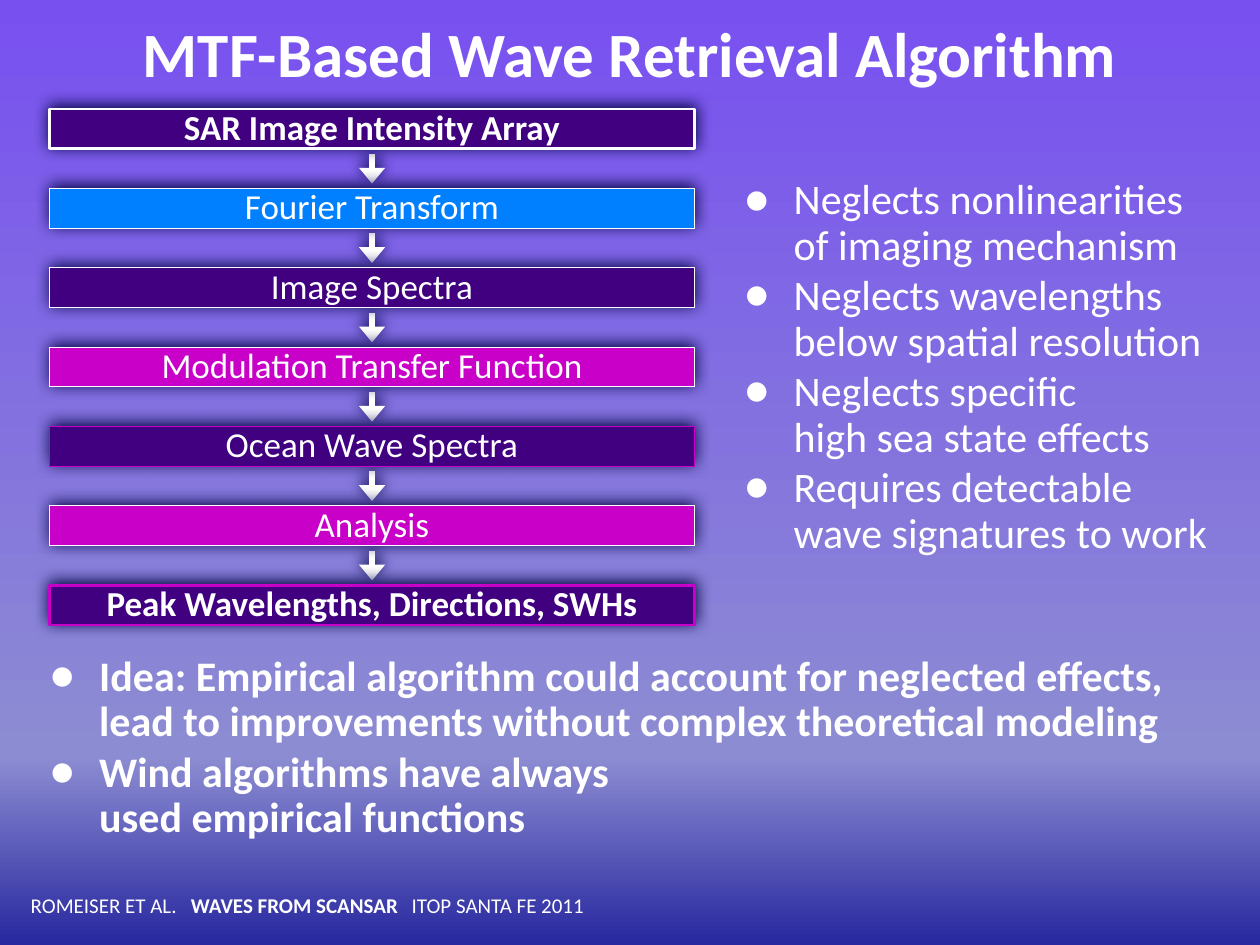
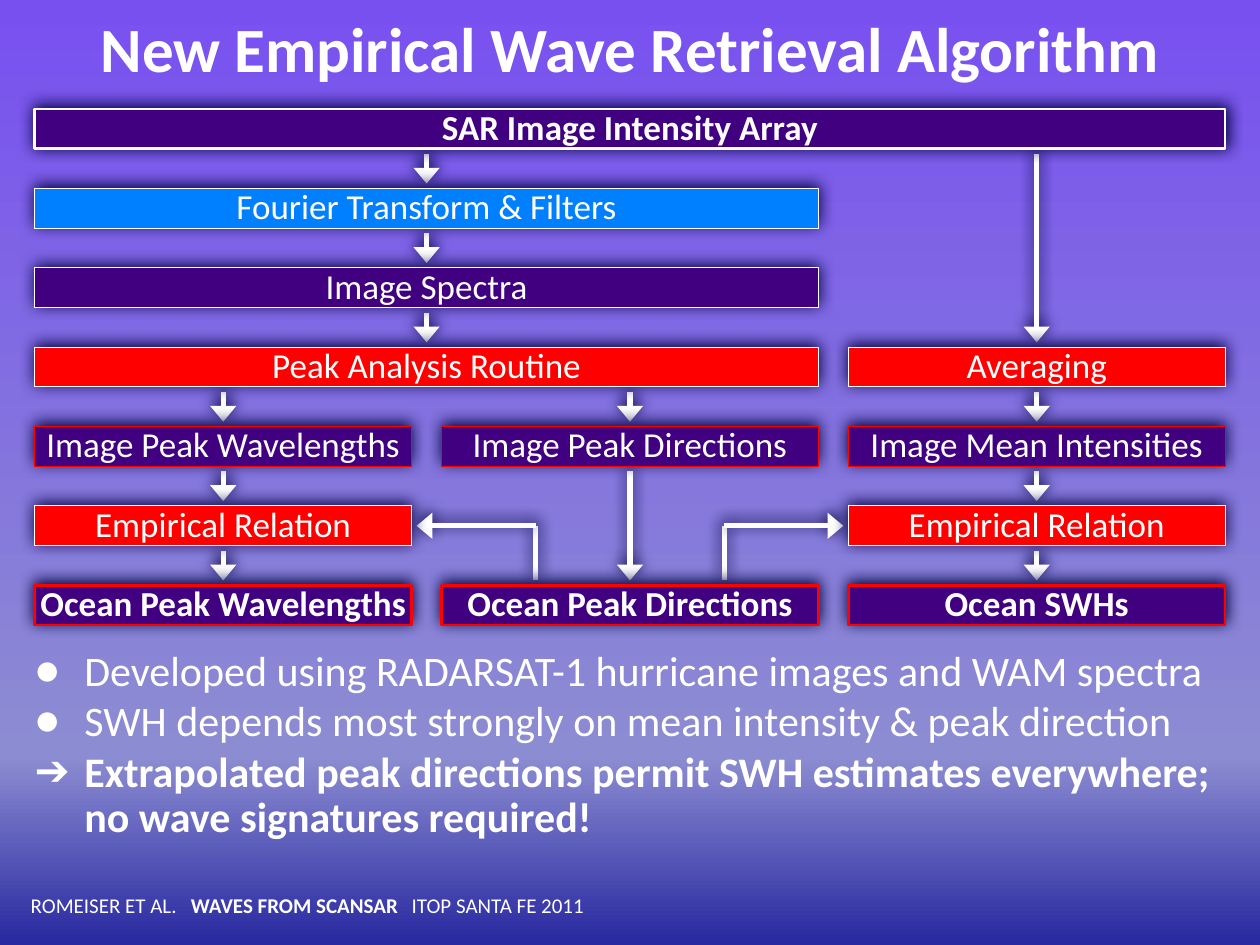
from lxml.etree import SubElement
from pptx import Presentation
from pptx.dml.color import RGBColor
from pptx.enum.shapes import MSO_CONNECTOR, MSO_SHAPE
from pptx.enum.text import MSO_ANCHOR, MSO_AUTO_SIZE, PP_ALIGN
from pptx.oxml.ns import qn
from pptx.util import Cm, Pt

HUES = {
    "white": "FFFFFF", "navy": "000040", "plum": "400080", "blue": "0080FF",
    "pink": "C800C8", "red": "FF0000",
    "top": "7850F0", "haze": "8C8CD2", "deep": "2828A0",
}
FONT = "Calibri"
HIGH, STEP, GAP = 0.8, 1.6, 0.1
WIDE, PITCH = 7.6, 8.2


def hue(name):
    """Return a named colour."""
    return RGBColor.from_string(HUES[name])


def tag(parent, name, **attrs):
    """Append a drawing element and return it."""
    return SubElement(parent, qn(name), attrs)


def write(frame, text, size=24, bold=False, align=PP_ALIGN.LEFT, space=1.0,
          after=0, mark=None, tabs=(), first=True):
    """Write one paragraph; stars switch bold and newlines break the line."""
    para = frame.paragraphs[0] if first else frame.add_paragraph()
    para.alignment, para.line_spacing = align, space
    para.space_before, para.space_after = Pt(0), Pt(after)
    props = para._p.get_or_add_pPr()
    if mark:
        props.set("marL", str(Cm(1)))
        props.set("indent", str(-Cm(1)))
        tag(tag(props, "a:buClr"), "a:srgbClr", val=HUES["white"])
        tag(props, "a:buFont", typeface=FONT)
        tag(props, "a:buChar", char=mark)
    if tabs:
        stops = tag(props, "a:tabLst")
        for stop in tabs:
            tag(stops, "a:tab", pos=str(Cm(stop)), algn="l")
    for row, line in enumerate(text.split("\n")):
        if row:
            para.add_line_break()
        for turn, part in enumerate(line.split("*")):
            if part:
                run = para.add_run()
                run.text = part
                font = run.font
                font.name, font.size = FONT, Pt(size)
                font.bold = bold != (turn % 2 == 1)
                font.color.rgb = hue("white")


def clear(frame, anchor=MSO_ANCHOR.TOP):
    """Strip the insets of a text frame and set its anchor."""
    frame.margin_left = frame.margin_right = 0
    frame.margin_top = frame.margin_bottom = 0
    frame.word_wrap, frame.auto_size = True, MSO_AUTO_SIZE.NONE
    frame.vertical_anchor = anchor
    return frame


def place(shape, left, top, width, height):
    """Move and size a shape in centimetres."""
    shape.left, shape.top = Cm(left), Cm(top)
    shape.width, shape.height = Cm(width), Cm(height)


def glow(shape):
    """Give a shape the soft dark shadow."""
    effects = tag(shape.element.spPr, "a:effectLst")
    shade = tag(effects, "a:outerShdw", blurRad=str(Pt(9)), dist=str(Pt(2)),
                dir="16200000", algn="ctr", rotWithShape="0")
    tag(shade, "a:srgbClr", val=HUES["navy"])


def box(slide, text, left, top, width, fill="plum", edge="white", bold=False):
    """Draw one step of a flow chart."""
    shape = slide.shapes.add_shape(
        MSO_SHAPE.RECTANGLE, Cm(left), Cm(top), Cm(width), Cm(HIGH))
    shape.fill.solid()
    shape.fill.fore_color.rgb = hue(fill)
    shape.line.color.rgb = hue(edge)
    shape.line.width = Pt(1.5 if bold else 0.5)
    glow(shape)
    write(clear(shape.text_frame, MSO_ANCHOR.MIDDLE), text, size=20, bold=bold,
          align=PP_ALIGN.CENTER, space=0.9)


def link(slide, start, end, head=True):
    """Draw a white line, with an arrowhead at its end if wanted."""
    line = slide.shapes.add_connector(
        MSO_CONNECTOR.STRAIGHT, *(Cm(n) for n in (*start, *end)))
    line.line.color.rgb = hue("white")
    line.line.width = Pt(3)
    if head:
        tag(line.element.spPr.find(qn("a:ln")), "a:tailEnd",
            type="triangle", w="lg", len="med")
    glow(line)


def drop(slide, mid, top, row, rows=1):
    """Draw an arrow down from one row to a later one."""
    start = top + row * STEP + HIGH + GAP
    link(slide, (mid, start), (mid, top + (row + rows) * STEP - GAP))


def chain(slide, left, top, width, steps):
    """Draw a single column of linked steps."""
    for row in range(len(steps) - 1):
        drop(slide, left + width / 2, top, row)
    for row, (text, fill, edge, bold) in enumerate(steps):
        box(slide, text, left, top + row * STEP, width, fill, edge, bold)


def grid(slide, left, top, cells, drops):
    """Draw steps on three columns, with side branches from the last row."""
    for col, row, rows in drops:
        drop(slide, left + WIDE / 2 + col * PITCH, top, row, rows)
    mid, level = left + PITCH + WIDE / 2, top + 5 * STEP + HIGH / 2
    for side in (-1, 1):
        bend = mid + side * WIDE / 4
        tip = mid + side * (PITCH - WIDE / 2 - GAP)
        link(slide, (bend, top + 6 * STEP - GAP), (bend, level), head=False)
        link(slide, (bend, level), (tip, level))
    for text, col, row, span, fill, edge, bold in cells:
        box(slide, text, left + col * PITCH, top + row * STEP,
            WIDE + (span - 1) * PITCH, fill, edge, bold)


def points(shape, area, items):
    """Fill a body placeholder with marked points."""
    place(shape, *area)
    frame = clear(shape.text_frame)
    for spot, (mark, text, bold) in enumerate(items):
        write(frame, text, bold=bold, space=0.9, after=3, mark=mark,
              first=spot == 0)


def paint(deck):
    """Set the shared gradient on the slide master."""
    master = deck.slide_master
    fill = master.background.fill
    fill.gradient()
    fill.gradient_angle = 270
    stops = master.element.find(".//" + qn("a:gsLst"))
    for old in list(stops):
        stops.remove(old)
    for name, pos in (("top", 0), ("haze", 80), ("deep", 100)):
        tag(tag(stops, "a:gs", pos=str(pos * 1000)), "a:srgbClr",
            val=HUES[name])


def start(deck, layout, title, top):
    """Add a slide with its title and footer."""
    slide = deck.slides.add_slide(deck.slide_layouts[layout])
    place(slide.shapes.title, 0, top, 25.4, 1.5)
    write(clear(slide.shapes.title.text_frame, MSO_ANCHOR.MIDDLE), title,
          size=36, bold=True, align=PP_ALIGN.CENTER)
    foot = slide.shapes.add_textbox(Cm(0.62), Cm(18), Cm(11.4), Cm(0.5))
    write(clear(foot.text_frame),
          "ROMEISER ET AL.\t*WAVES FROM SCANSAR*\tITOP SANTA FE 2011",
          size=12, tabs=(3.23, 7.68))
    return slide


def classic(deck):
    """Build the slide on the MTF-based algorithm."""
    slide = start(deck, 3, "MTF-Based Wave Retrieval Algorithm", 0.3)
    chain(slide, 1, 2.2, 13, [
        ("SAR Image Intensity Array", "plum", "white", True),
        ("Fourier Transform", "blue", "white", False),
        ("Image Spectra", "plum", "white", False),
        ("Modulation Transfer Function", "pink", "white", False),
        ("Ocean Wave Spectra", "plum", "pink", False),
        ("Analysis", "pink", "white", False),
        ("Peak Wavelengths, Directions, SWHs", "plum", "pink", True),
    ])
    points(slide.placeholders[1], (15, 3.6, 9.4, 7.6), [
        ("●", "Neglects nonlinearities\nof imaging mechanism", False),
        ("●", "Neglects wavelengths\nbelow spatial resolution", False),
        ("●", "Neglects specific\nhigh sea state effects", False),
        ("●", "Requires detectable\nwave signatures to work", False),
    ])
    points(slide.placeholders[2], (1, 13.2, 23.4, 3.8), [
        ("●", "Idea: Empirical algorithm could account for neglected effects,\n"
         "lead to improvements without complex theoretical modeling", True),
        ("●", "Wind algorithms have always\nused empirical functions", True),
    ])


def modern(deck):
    """Build the slide on the empirical algorithm."""
    slide = start(deck, 1, "New Empirical Wave Retrieval Algorithm", 0.2)
    cells = [
        ("SAR Image Intensity Array", 0, 0, 3, "plum", "white", True),
        ("Fourier Transform & Filters", 0, 1, 2, "blue", "white", False),
        ("Image Spectra", 0, 2, 2, "plum", "white", False),
        ("Peak Analysis Routine", 0, 3, 2, "red", "white", False),
        ("Averaging", 2, 3, 1, "red", "white", False),
        ("Image Peak Wavelengths", 0, 4, 1, "plum", "red", False),
        ("Image Peak Directions", 1, 4, 1, "plum", "red", False),
        ("Image Mean Intensities", 2, 4, 1, "plum", "red", False),
        ("Empirical Relation", 0, 5, 1, "red", "white", False),
        ("Empirical Relation", 2, 5, 1, "red", "white", False),
        ("Ocean Peak Wavelengths", 0, 6, 1, "plum", "red", True),
        ("Ocean Peak Directions", 1, 6, 1, "plum", "red", True),
        ("Ocean SWHs", 2, 6, 1, "plum", "red", True),
    ]
    drops = [(0.5, row, 1) for row in range(3)]
    drops += [(col, row, 1) for col in (0, 2) for row in (3, 4, 5)]
    drops += [(1, 3, 1), (1, 4, 2), (2, 0, 3)]
    grid(slide, 0.7, 2.2, cells, drops)
    points(slide.placeholders[1], (0.7, 13.1, 24, 4), [
        ("●", "Developed using RADARSAT-1 hurricane images and WAM spectra",
         False),
        ("●", "SWH depends most strongly on mean intensity & peak direction",
         False),
        ("➔", "Extrapolated peak directions permit SWH estimates everywhere;\n"
         "no wave signatures required!", True),
    ])


def main():
    """Build and save the deck."""
    deck = Presentation()
    deck.slide_width, deck.slide_height = Cm(25.4), Cm(19.05)
    paint(deck)
    classic(deck)
    modern(deck)
    deck.save("out.pptx")


if __name__ == "__main__":
    main()
